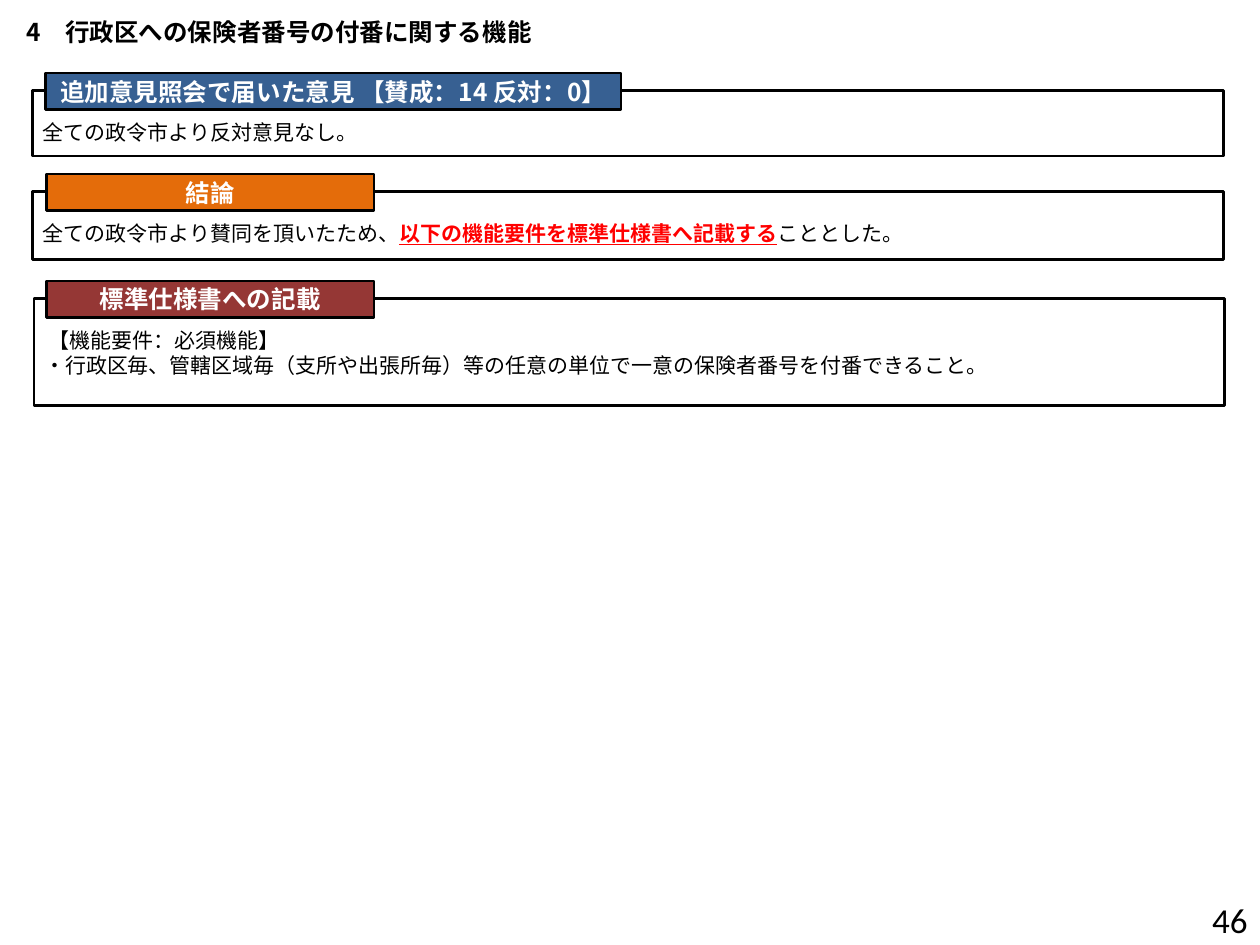
from lxml import etree
from pptx import Presentation
from pptx.dml.color import RGBColor
from pptx.enum.shapes import MSO_SHAPE
from pptx.enum.text import MSO_ANCHOR, PP_ALIGN
from pptx.oxml.ns import qn
from pptx.util import Pt

RECTANGLE = MSO_SHAPE.RECTANGLE
TOP, MIDDLE = MSO_ANCHOR.TOP, MSO_ANCHOR.MIDDLE
LEFT, CENTER, RIGHT = PP_ALIGN.LEFT, PP_ALIGN.CENTER, PP_ALIGN.RIGHT

BLACK = RGBColor(0x00, 0x00, 0x00)
WHITE = RGBColor(0xFF, 0xFF, 0xFF)
RED = RGBColor(0xFF, 0x00, 0x00)
BLUE = RGBColor(0x37, 0x60, 0x92)
ORANGE = RGBColor(0xE4, 0x6C, 0x0A)
MAROON = RGBColor(0x95, 0x37, 0x35)

JAPANESE = "Noto Sans CJK JP"
BODY = {"name": JAPANESE, "size": Pt(12), "color": BLACK}
EMPHASIS = {**BODY, "color": RED, "bold": True, "underline": True}
HEADING = {"name": JAPANESE, "size": Pt(14), "color": BLACK, "bold": True}
TAB = {**HEADING, "color": WHITE}
PAGE_NUMBER = {"name": "Calibri", "size": Pt(20), "color": BLACK}

PANEL_WIDTH = 680.4
TAB_HEIGHT = 20.9
TAB_RISE = 10.1  # how far a tab stands above its panel

# panel left, top, height; tab left, width, colour, title; paragraphs of runs
SECTIONS = [
    (18.7, 51.8, 37.4, 25.9, 329, BLUE,
     "追加意見照会で届いた意見 【賛成：14 反対：0】",
     [[("全ての政令市より反対意見なし。", BODY)]]),
    (18.7, 109.6, 38.9, 26.6, 187.2, ORANGE, "結論",
     [[("全ての政令市より賛同を頂いたため、", BODY),
       ("以下の機能要件を標準仕様書へ記載する", EMPHASIS),
       ("こととした。", BODY)]]),
    (19.4, 170.6, 61.2, 26.6, 187.2, MAROON, "標準仕様書への記載",
     [[(" 【機能要件：必須機能】", BODY)],
      [("・行政区毎、管轄区域毎（支所や出張所毎）等の任意の単位で"
        "一意の保険者番号を付番できること。", BODY)]]),
]


def format_run(run, style):
    for key, value in style.items():
        if key == "color":
            run.font.color.rgb = value
        else:
            setattr(run.font, key, value)
    east_asian = etree.SubElement(run.font._element, qn("a:ea"))
    east_asian.set("typeface", style["name"])


def write_text(shape, paragraphs, insets, align=LEFT, anchor=TOP, spacing=None):
    frame = shape.text_frame
    frame.word_wrap = True
    frame.vertical_anchor = anchor
    for side, inset in zip(("left", "top", "right", "bottom"), insets):
        setattr(frame, f"margin_{side}", Pt(inset))
    for index, runs in enumerate(paragraphs):
        paragraph = frame.add_paragraph() if index else frame.paragraphs[0]
        paragraph.alignment = align
        if spacing:
            paragraph.line_spacing = Pt(spacing)
        for text, style in runs:
            run = paragraph.add_run()
            run.text = text
            format_run(run, style)


def add_label(slide, box, text, style, insets, **layout):
    label = slide.shapes.add_textbox(*map(Pt, box))
    write_text(label, [[(text, style)]], insets, **layout)


def add_box(slide, box, fill=None):
    rectangle = slide.shapes.add_shape(RECTANGLE, *map(Pt, box))
    rectangle.shadow.inherit = False
    if fill is None:
        rectangle.fill.background()
    else:
        rectangle.fill.solid()
        rectangle.fill.fore_color.rgb = fill
    rectangle.line.color.rgb = BLACK
    rectangle.line.width = Pt(1.5)
    return rectangle


def add_section(slide, left, top, height, tab_left, tab_width, color, title, body):
    panel = add_box(slide, (left, top, PANEL_WIDTH, height))
    write_text(panel, body, (5.8, 16.5, 5.8, 5.8), spacing=14.3)
    tab = add_box(slide, (tab_left, top - TAB_RISE, tab_width, TAB_HEIGHT), color)
    write_text(tab, [[(title, TAB)]], (0, 2.9, 0, 2.9), CENTER, MIDDLE)


def main():
    deck = Presentation()
    deck.slide_width, deck.slide_height = Pt(720), Pt(540)
    slide = deck.slides.add_slide(deck.slide_layouts[6])

    # Heading and page number
    add_label(slide, (7.9, 1.4, 682.6, 21.6), "4　行政区への保険者番号の付番に関する機能",
              HEADING, (7.2, 7.2, 7.2, 7.2), spacing=18)
    add_label(slide, (552.2, 511.2, 167.8, 28.8), "46", PAGE_NUMBER,
              (7.2, 3.6, 7.2, 3.6), align=RIGHT, anchor=MIDDLE)

    # Tabbed panels
    for section in SECTIONS:
        add_section(slide, *section)

    deck.save("out.pptx")


if __name__ == "__main__":
    main()
